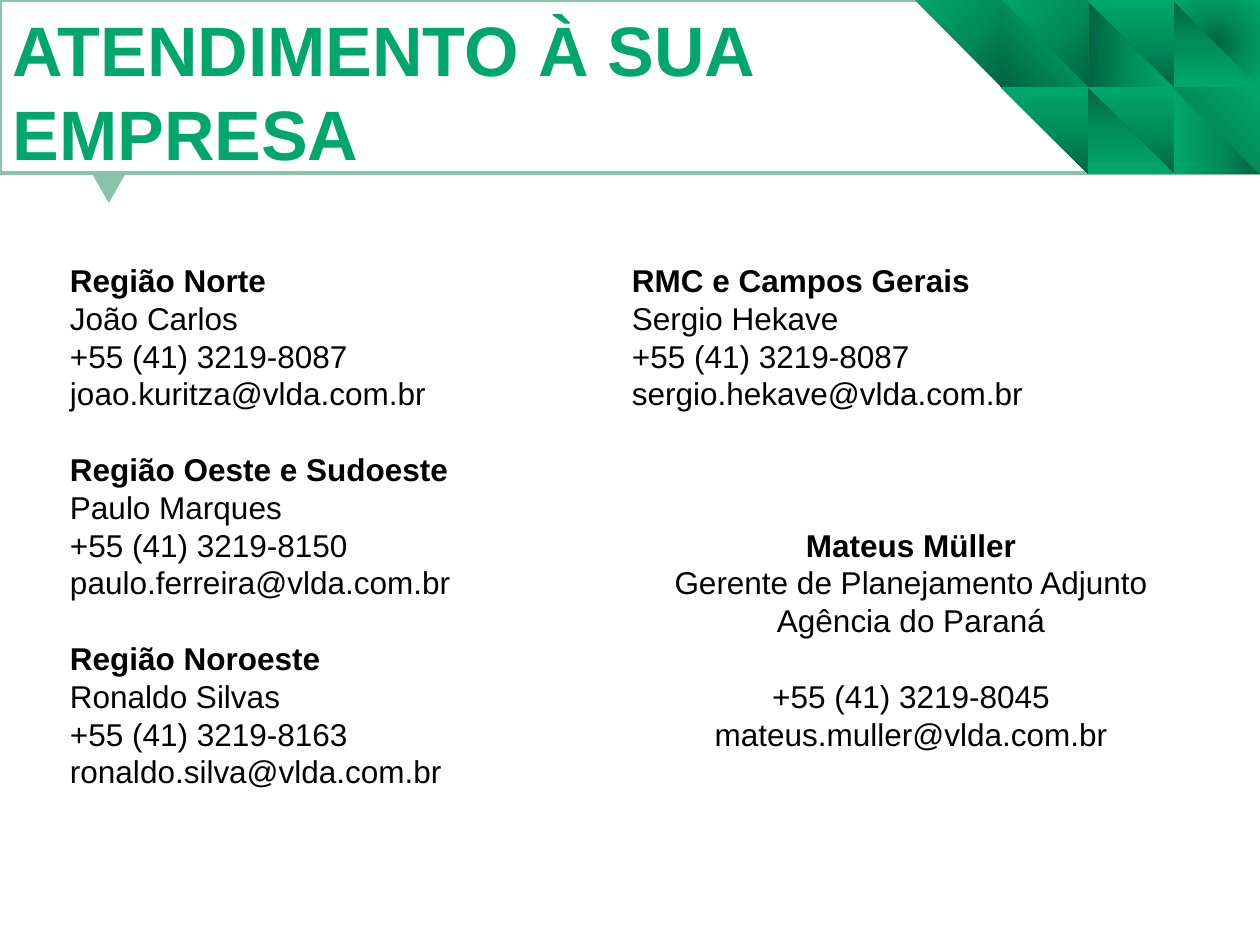
import pptx
import pptx.util
import pptx.dml.color
import pptx.enum.shapes
import pptx.enum.text
import pptx.oxml
import pptx.oxml.ns

PX = 914400 / 126
SHAPE = pptx.enum.shapes.MSO_SHAPE
ALIGN = pptx.enum.text.PP_ALIGN
Pt = pptx.util.Pt


def rgb(code):
    return pptx.dml.color.RGBColor.from_string(code)


def place(item, *box):
    """Set left, top, width and height in px."""
    item.left, item.top, item.width, item.height = [round(n * PX) for n in box]


deck = pptx.Presentation()
deck.slide_width, deck.slide_height = round(1260 * PX), round(945 * PX)
slide = deck.slides.add_slide(deck.slide_layouts[3])
shapes = slide.shapes
title, left, right = slide.placeholders

# Header band and its pointer, behind the text
band = shapes.add_shape(SHAPE.RECTANGLE, 0, 0, 0, 0)
place(band, 0, 0, 1260, 173)
band.fill.solid()
band.fill.fore_color.rgb = rgb("FFFFFF")
band.line.color.rgb = rgb("88C4AA")
band.line.width = Pt(2)

mark = shapes.add_shape(SHAPE.ISOSCELES_TRIANGLE, 0, 0, 0, 0)
place(mark, 83, 130, 68, 58)
mark.rotation = 60
mark.fill.solid()
mark.fill.fore_color.rgb = rgb("88C4AA")
mark.line.fill.background()

for item in (band, mark):
    item.shadow.inherit = False
    shapes._spTree.remove(item._element)
    shapes._spTree.insert(2, item._element)

# Title
place(title, 0, 0, 915, 183)
title.text = "ATENDIMENTO À SUA EMPRESA"
frame = title.text_frame
frame.word_wrap = True
frame.auto_size = pptx.enum.text.MSO_AUTO_SIZE.NONE
frame.vertical_anchor = pptx.enum.text.MSO_ANCHOR.TOP
head = frame.paragraphs[0]
head.alignment = ALIGN.LEFT
head.line_spacing = Pt(48)
head.font.name = "Arial"
head.font.size = Pt(40)
head.font.bold = True
head.font.color.rgb = rgb("00A76D")

# Mosaic: column, row, turn, flipped, linear angle or focus (l, t, r, b)
tiles = [
    (3, 1, 0, False, 180),
    (3, 0, 0, False, 90),
    (2, 1, 180, False, 90),
    (2, 0, 180, True, 0),
    (1, 0, 180, False, (100, 100, 0, 0)),
    (3, 1, 180, False, (0, 100, 100, 0)),
    (3, 0, 180, False, (50, 50, 50, 50)),
    (2, 0, 180, False, 90),
    (2, 1, 0, False, 90),
    (1, 1, 180, False, 90),
    (1, 0, 180, True, (0, 100, 100, 0)),
    (0, 0, 180, False, (100, 100, 0, 0)),
]
stops = "".join(
    f'<a:gs pos="{pos}000"><a:srgbClr val="{code}"/></a:gs>'
    for pos, code in ((0, "006341"), (50, "008D5C"), (100, "00A76D"))
)
for col, row, turn, flip, shade in tiles:
    tile = shapes.add_shape(SHAPE.RIGHT_TRIANGLE, 0, 0, 0, 0)
    place(tile, 915 + 86 * col, 87 * row, 87, 87)
    tile.rotation = turn
    tile.line.fill.background()
    tile.shadow.inherit = False
    props = tile._element.spPr
    if flip:
        props.xfrm.set("flipH", "1")
        props.xfrm.set("flipV", "1")
    if isinstance(shade, tuple):
        l, t, r, b = [n * 1000 for n in shade]
        way = (f'<a:path path="circle"><a:fillToRect l="{l}" t="{t}" '
               f'r="{r}" b="{b}"/></a:path>')
    else:
        way = f'<a:lin ang="{shade * 60000}" scaled="0"/>'
    fill = pptx.oxml.parse_xml(
        f'<a:gradFill {pptx.oxml.ns.nsdecls("a")} rotWithShape="1">'
        f'<a:gsLst>{stops}</a:gsLst>{way}</a:gradFill>')
    props.find(pptx.oxml.ns.qn("a:prstGeom")).addnext(fill)

# Contacts: blank lines before, alignment, lines (a bold name comes first)
LINE = 21.6
lists = [
    (left, 64, [
        (0, ALIGN.LEFT, True, ["Região Norte", "João Carlos",
                               "+55 (41) 3219-8087", "joao.kuritza@vlda.com.br"]),
        (1, ALIGN.LEFT, True, ["Região Oeste e Sudoeste", "Paulo Marques",
                               "+55 (41) 3219-8150", "paulo.ferreira@vlda.com.br"]),
        (1, ALIGN.LEFT, True, ["Região Noroeste", "Ronaldo Silvas",
                               "+55 (41) 3219-8163", "ronaldo.silva@vlda.com.br"]),
    ]),
    (right, 626, [
        (0, ALIGN.LEFT, True, ["RMC e Campos Gerais", "Sergio Hekave",
                               "+55 (41) 3219-8087", "sergio.hekave@vlda.com.br"]),
        (3, ALIGN.CENTER, True, ["Mateus Müller", "Gerente de Planejamento Adjunto",
                                 "Agência do Paraná"]),
        (1, ALIGN.CENTER, False, ["+55 (41) 3219-8045", "mateus.muller@vlda.com.br"]),
    ]),
]
for body, x, groups in lists:
    place(body, x, 255, 570, 560)
    frame = body.text_frame
    frame.word_wrap = True
    frame.auto_size = pptx.enum.text.MSO_AUTO_SIZE.NONE
    frame.margin_left = frame.margin_right = round(6 * PX)
    frame.margin_top = frame.margin_bottom = round(6 * PX)
    frame.text = "\n".join(line for group in groups for line in group[3])
    paras = iter(frame.paragraphs)
    for gap, align, named, lines in groups:
        for rank, para in zip(range(len(lines)), paras):
            props = para._p.get_or_add_pPr()
            props.set("marL", "0")
            props.set("indent", "0")
            props.append(pptx.oxml.parse_xml(
                f'<a:buNone {pptx.oxml.ns.nsdecls("a")}/>'))
            para.alignment = align
            para.line_spacing = Pt(LINE)
            para.space_before = Pt(gap * LINE if rank == 0 else 0)
            para.font.name = "Arial"
            para.font.size = Pt(18)
            para.font.bold = named and rank == 0
            para.font.color.rgb = rgb("000000")

deck.save("out.pptx")
